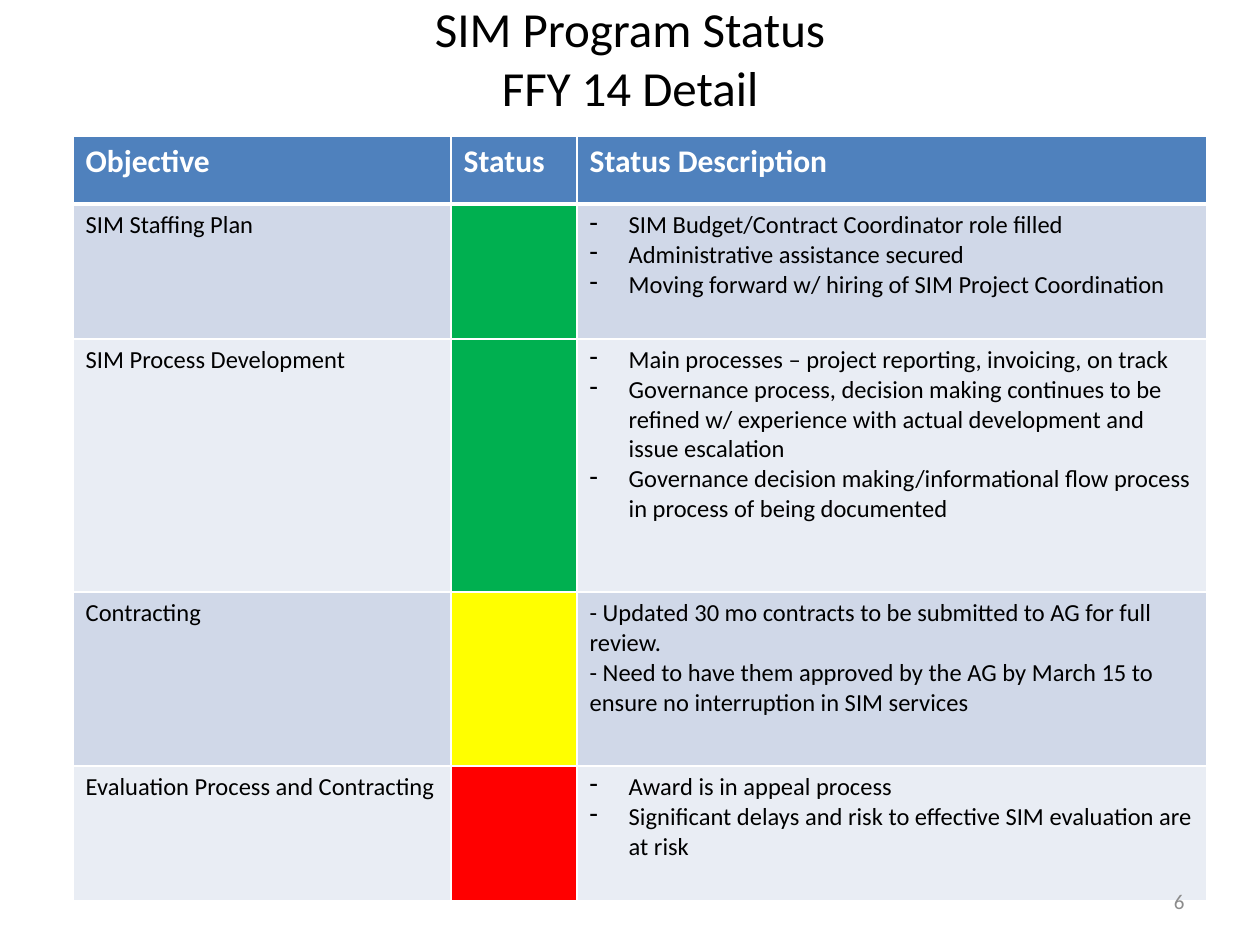
from lxml.etree import SubElement
from pptx import Presentation
from pptx.dml.color import RGBColor
from pptx.enum.text import MSO_ANCHOR as Anchor, MSO_AUTO_SIZE as Fit, PP_ALIGN as Align
from pptx.oxml.ns import qn
from pptx.util import Inches, Pt

BLACK = RGBColor(0x00, 0x00, 0x00)
WHITE = RGBColor(0xFF, 0xFF, 0xFF)
GRAY = RGBColor(0x8C, 0x8C, 0x8C)
BLUE = RGBColor(0x4F, 0x81, 0xBD)
BANDS = [RGBColor(0xD0, 0xD8, 0xE8), RGBColor(0xE9, 0xED, 0xF4)]
GREEN = RGBColor(0x00, 0xB0, 0x50)
YELLOW = RGBColor(0xFF, 0xFF, 0x00)
RED = RGBColor(0xFF, 0x00, 0x00)

HEADS = ["Objective", "Status", "Status Description"]
WIDTHS = [3, 1, 5]
HEIGHTS = [0.54, 1.07, 2.01, 1.38, 1.07]
# Objective, status colour, whether the notes are bulleted, notes
GOALS = [
    ("SIM Staffing Plan", GREEN, True, [
        "SIM Budget/Contract Coordinator role filled",
        "Administrative assistance secured",
        "Moving forward w/ hiring of SIM Project Coordination"]),
    ("SIM Process Development", GREEN, True, [
        "Main processes – project reporting, invoicing, on track",
        "Governance process, decision making continues to be refined w/ "
        "experience with actual development and issue escalation",
        "Governance decision making/informational flow process in process "
        "of being documented"]),
    ("Contracting", YELLOW, False, [
        "- Updated 30 mo contracts to be submitted to AG for full review.",
        "- Need to have them approved by the AG by March 15 to ensure no "
        "interruption in SIM services"]),
    ("Evaluation Process and Contracting", RED, True, [
        "Award is in appeal process",
        "Significant delays and risk to effective SIM evaluation are at risk"]),
]


def write(frame, lines, size=14, color=BLACK, bold=False, align=Align.LEFT, dash=False):
    """Fill a text frame with one paragraph per line; \\v breaks a line."""
    for i, line in enumerate(lines):
        para = frame.add_paragraph() if i else frame.paragraphs[0]
        para.text = line
        para.alignment = align
        for run in para.runs:
            font = run.font
            font.name, font.size, font.bold = "Calibri", Pt(size), bold
            font.color.rgb = color
        if dash:
            props = para._p.get_or_add_pPr()
            props.set("marL", str(Inches(0.31)))
            props.set("indent", str(-Inches(0.31)))
            SubElement(props, qn("a:buChar"), char="-")


def paint(cell, color, base=1):
    """Give a cell white borders, the bottom one base points wide, and a fill."""
    props = cell._tc.get_or_add_tcPr()
    for side, width in (("L", 1), ("R", 1), ("T", 1), ("B", base)):
        line = SubElement(props, qn(f"a:ln{side}"), w=str(Pt(width)))
        fill = SubElement(line, qn("a:solidFill"))
        SubElement(fill, qn("a:srgbClr"), val=str(WHITE))
    cell.fill.solid()
    cell.fill.fore_color.rgb = color


prs = Presentation()
prs.slide_width, prs.slide_height = Inches(10), Inches(7.5)
slide = prs.slides.add_slide(prs.slide_layouts[5])

title = slide.shapes.title
title.left, title.top = Inches(0.5), Inches(-0.17)
title.width, title.height = Inches(9), Inches(1.25)
title.text_frame.auto_size = Fit.NONE
title.text_frame.vertical_anchor = Anchor.MIDDLE
write(title.text_frame, ["SIM Program Status\vFFY 14 Detail"], size=28, align=Align.CENTER)

table = slide.shapes.add_table(
    len(HEIGHTS), len(WIDTHS), Inches(0.58), Inches(1.08),
    Inches(sum(WIDTHS)), Inches(sum(HEIGHTS))).table
for col, width in zip(table.columns, WIDTHS):
    col.width = Inches(width)
for row, height in zip(table.rows, HEIGHTS):
    row.height = Inches(height)

for cell, head in zip(table.rows[0].cells, HEADS):
    paint(cell, BLUE, base=3)
    write(cell.text_frame, [head], size=18, color=WHITE, bold=True)

for i, (goal, status, dash, notes) in enumerate(GOALS):
    name, light, detail = table.rows[i + 1].cells
    band = BANDS[i % 2]
    for cell, color in ((name, band), (light, status), (detail, band)):
        paint(cell, color)
    write(name.text_frame, [goal])
    write(detail.text_frame, notes, dash=dash)

page = slide.shapes.add_textbox(Inches(7.17), Inches(6.95), Inches(2.33), Inches(0.4))
page.text_frame.word_wrap = True
page.text_frame.vertical_anchor = Anchor.MIDDLE
write(page.text_frame, ["6"], size=12, color=GRAY, align=Align.RIGHT)

prs.save("out.pptx")
